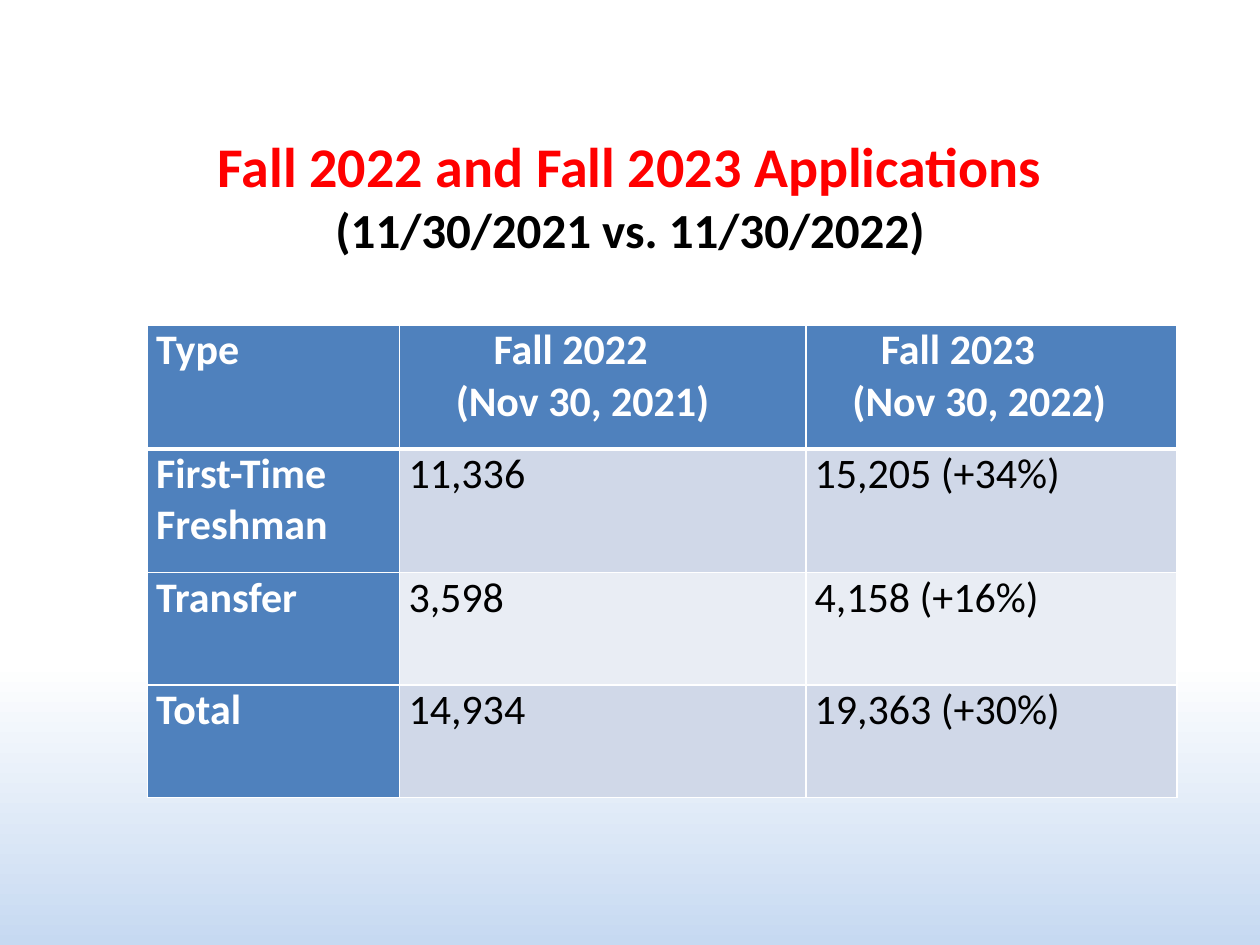
import lxml.etree
import pptx
import pptx.dml.color
import pptx.enum.text
import pptx.oxml.ns
import pptx.util

WIDTH, HEIGHT = pptx.util.Inches(10), pptx.util.Inches(7.5)
FONT = "Calibri"
COLORS = {
    "page": "FFFFFF",
    "page_foot": "C6D9F1",
    "title": "FF0000",
    "text": "000000",
    "label": "FFFFFF",
    "header": "4F81BD",
    "odd_band": "D0D8E8",
    "even_band": "E9EDF4",
    "border": "FFFFFF",
}
TITLE_BOX = (0.154, 0.133, 0.692, 0.188)
TABLE_BOX = (0.117, 0.344, 0.817, 0.5)
COLUMN_WEIGHTS = (2, 3.22, 2.94)
ROW_WEIGHTS = (0.98, 0.98, 0.89, 0.89)
SPACE = 0.075
APPLICATIONS = [
    [["Type"], ["Fall 2022", "(Nov 30, 2021)"], ["Fall 2023", "(Nov 30, 2022)"]],
    [["First-Time Freshman"], ["11,336"], ["15,205 (+34%)"]],
    [["Transfer"], ["3,598"], ["4,158 (+16%)"]],
    [["Total"], ["14,934"], ["19,363 (+30%)"]],
]
HEADER_INDENTS = [(0,), (9, 5), (7, 4)]


def rgb(name):
    """Return the named palette colour."""
    return pptx.dml.color.RGBColor.from_string(COLORS[name])


def place(box):
    """Turn shares of the slide into left, top, width and height."""
    return [pptx.util.Emu(round(share * side))
            for share, side in zip(box, (WIDTH, HEIGHT) * 2)]


def write(paragraph, text, size=24, color="text", bold=False, indent=0):
    """Add a formatted run to a paragraph."""
    run = paragraph.add_run()
    run.text = text
    run.font.name, run.font.size, run.font.bold = FONT, pptx.util.Pt(size), bold
    run.font.color.rgb = rgb(color)
    if indent:
        properties = paragraph._p.get_or_add_pPr()
        properties.set("marL", str(pptx.util.Inches(indent)))
        properties.set("indent", "0")


def outline(cell, top, bottom):
    """Draw the four borders of a cell, widths in points."""
    properties = cell._tc.get_or_add_tcPr()
    for side, points in (("L", 1), ("R", 1), ("T", top), ("B", bottom)):
        line = lxml.etree.SubElement(properties, pptx.oxml.ns.qn(f"a:ln{side}"),
                                     w=str(pptx.util.Pt(points)))
        fill = lxml.etree.SubElement(line, pptx.oxml.ns.qn("a:solidFill"))
        lxml.etree.SubElement(fill, pptx.oxml.ns.qn("a:srgbClr"), val=COLORS["border"])


def paint_background(slide):
    """Fade the foot of the slide to pale blue."""
    fill = slide.background.fill
    fill.gradient()
    fill.gradient_angle = 270
    stops = zip(fill.gradient_stops, (0.7, 1), ("page", "page_foot"))
    for stop, position, color in stops:
        stop.position = position
        stop.color.rgb = rgb(color)


def add_title(slide, box):
    """Place the heading and the dates compared."""
    frame = slide.shapes.add_textbox(*place(box)).text_frame
    frame.word_wrap = True
    frame.vertical_anchor = pptx.enum.text.MSO_ANCHOR.TOP
    heading = frame.paragraphs[0]
    heading.alignment = pptx.enum.text.PP_ALIGN.CENTER
    write(heading, "Fall 2022 and Fall 2023 Applications ", size=32, color="title", bold=True)
    write(heading, "(11/30/2021 vs. 11/30/2022)", size=28, bold=True)


def fill_cell(cell, lines, row, column):
    """Style one cell by its place in the table and write its lines."""
    is_label = row == 0 or column == 0
    outline(cell, top=3 if row == 1 else 1, bottom=3 if row == 0 else 1)
    cell.fill.solid()
    cell.fill.fore_color.rgb = rgb(
        "header" if is_label else "odd_band" if row % 2 else "even_band")
    cell.margin_left = cell.margin_right = pptx.util.Inches(0.07)
    cell.margin_top = cell.margin_bottom = 0
    indents = HEADER_INDENTS[column] if row == 0 else (0,)
    frame = cell.text_frame
    for number, (line, spaces) in enumerate(zip(lines, indents)):
        paragraph = frame.add_paragraph() if number else frame.paragraphs[0]
        write(paragraph, line, color="label" if is_label else "text",
              bold=is_label, indent=spaces * SPACE)


def add_applications(slide, box):
    """Place the table of applications by type and term."""
    left, top, width, height = place(box)
    table = slide.shapes.add_table(
        len(ROW_WEIGHTS), len(COLUMN_WEIGHTS), left, top, width, height).table
    for column, weight in zip(table.columns, COLUMN_WEIGHTS):
        column.width = round(width * weight / sum(COLUMN_WEIGHTS))
    for row, weight in zip(table.rows, ROW_WEIGHTS):
        row.height = round(height * weight / sum(ROW_WEIGHTS))
    table.first_col = True
    for row, entries in enumerate(APPLICATIONS):
        for column, lines in enumerate(entries):
            fill_cell(table.cell(row, column), lines, row, column)


def main():
    """Build and save the slide."""
    deck = pptx.Presentation()
    deck.slide_width, deck.slide_height = WIDTH, HEIGHT
    slide = deck.slides.add_slide(deck.slide_layouts[6])
    paint_background(slide)
    add_applications(slide, TABLE_BOX)
    add_title(slide, TITLE_BOX)
    deck.save("out.pptx")


if __name__ == "__main__":
    main()
